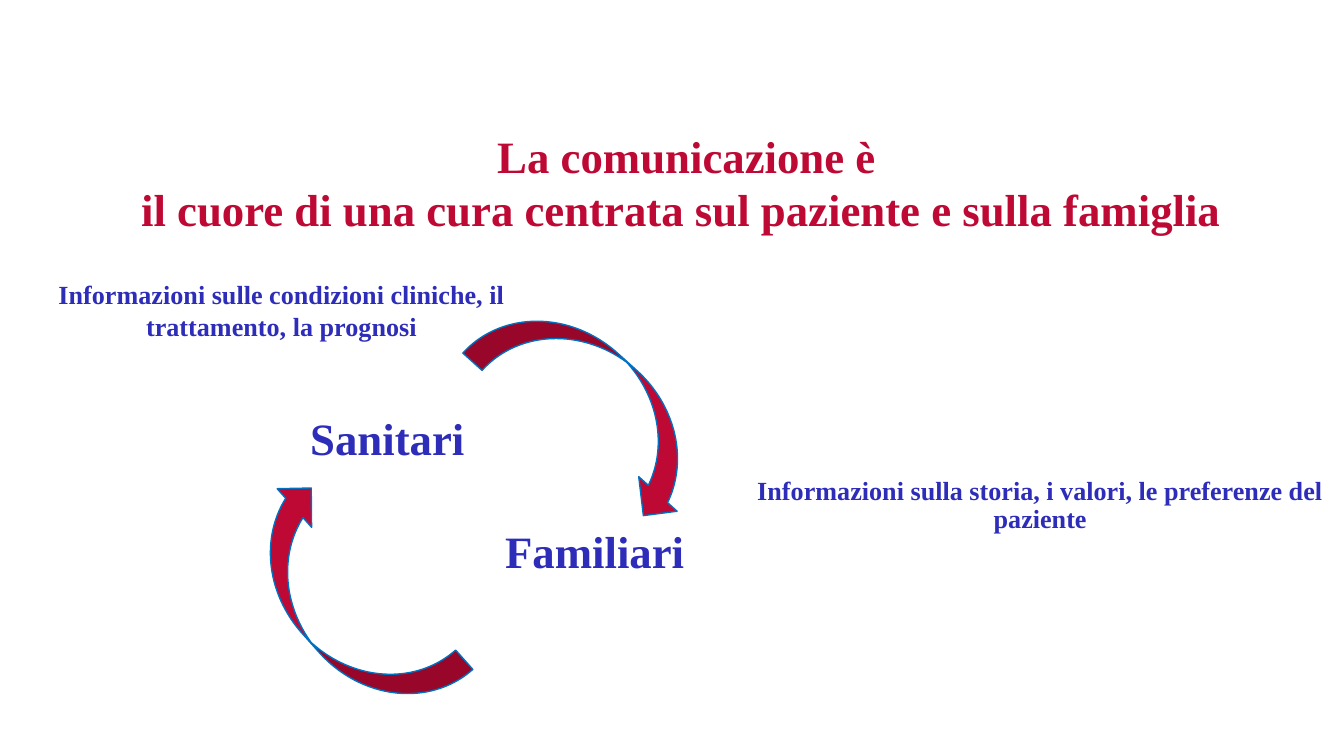
from pptx import Presentation
from pptx.dml.color import RGBColor
from pptx.enum.shapes import MSO_SHAPE
from pptx.enum.text import MSO_AUTO_SIZE, PP_ALIGN
from pptx.util import Inches, Pt

CENTER = PP_ALIGN.CENTER
LEFT = PP_ALIGN.LEFT
CURVED_ARROW = MSO_SHAPE.CURVED_LEFT_ARROW
GROW = MSO_AUTO_SIZE.SHAPE_TO_FIT_TEXT
FONT = "Times New Roman"
COLORS = {"red": "BE0934", "blue": "2D2DB9", "outline": "0070C0"}
SLIDE_WIDTH = 10
SLIDE_HEIGHT = SLIDE_WIDTH * 9 / 16


def add_text(slide, box, text, size=14, color="blue", align=CENTER, inset=0.07, spacing=None):
    """Add a bold text box with one paragraph for each line of text."""
    shape = slide.shapes.add_textbox(*map(Inches, box))
    frame = shape.text_frame
    frame.word_wrap = True
    frame.auto_size = GROW
    frame.margin_left = frame.margin_right = Inches(inset)
    frame.margin_top = frame.margin_bottom = Inches(inset / 2)
    frame.text = text
    for paragraph in frame.paragraphs:
        paragraph.alignment = align
        if spacing:
            paragraph.line_spacing = spacing
        font = paragraph.font
        font.name = FONT
        font.size = Pt(size)
        font.bold = True
        font.color.rgb = RGBColor.from_string(COLORS[color])


def add_curved_arrow(slide, box, rotation):
    """Add a red curved arrow turned by the given angle."""
    shape = slide.shapes.add_shape(CURVED_ARROW, *map(Inches, box))
    shape.rotation = rotation
    shape.shadow.inherit = False
    shape.fill.solid()
    shape.fill.fore_color.rgb = RGBColor.from_string(COLORS["red"])
    shape.line.color.rgb = RGBColor.from_string(COLORS["outline"])
    shape.line.width = Pt(0.75)


def add_title(slide, box):
    """Add the two-line heading."""
    text = " La comunicazione è\nil cuore di una cura centrata sul paziente e sulla famiglia"
    add_text(slide, box, text, size=24, color="red")


def add_cycle(slide, left, top):
    """Add the two roles and the arrows that link them."""
    for text, x, y, width in (("Sanitari", 0.03, 1, 1.37), ("Familiari", 1.48, 1.84, 1.68)):
        add_text(slide, (left + x, top + y, width, 0.5), text, size=24, align=LEFT, inset=0.1)
    for x, y, rotation in ((1.88, 0, 312), (0, 1.48, 138.3)):
        add_curved_arrow(slide, (left + x, top + y, 0.77, 2), rotation)


def add_information(slide, clinical_box, personal_box):
    """Add the captions for what each side shares."""
    add_text(slide, clinical_box,
             "Informazioni sulle condizioni cliniche, il trattamento, la prognosi")
    add_text(slide, personal_box,
             "Informazioni sulla storia, i valori, le preferenze del paziente", spacing=0.9)


def main():
    """Build and save the slide."""
    presentation = Presentation()
    presentation.slide_width = Inches(SLIDE_WIDTH)
    presentation.slide_height = Inches(SLIDE_HEIGHT)
    slide = presentation.slides.add_slide(presentation.slide_layouts[6])
    add_title(slide, (0.59, 0.92, 8.95, 0.89))
    add_information(slide, (0.02, 2.04, 4.15, 1), (5.48, 3.52, 4.52, 0.5))
    add_cycle(slide, 2.18, 2.01)
    presentation.save("out.pptx")


if __name__ == "__main__":
    main()
